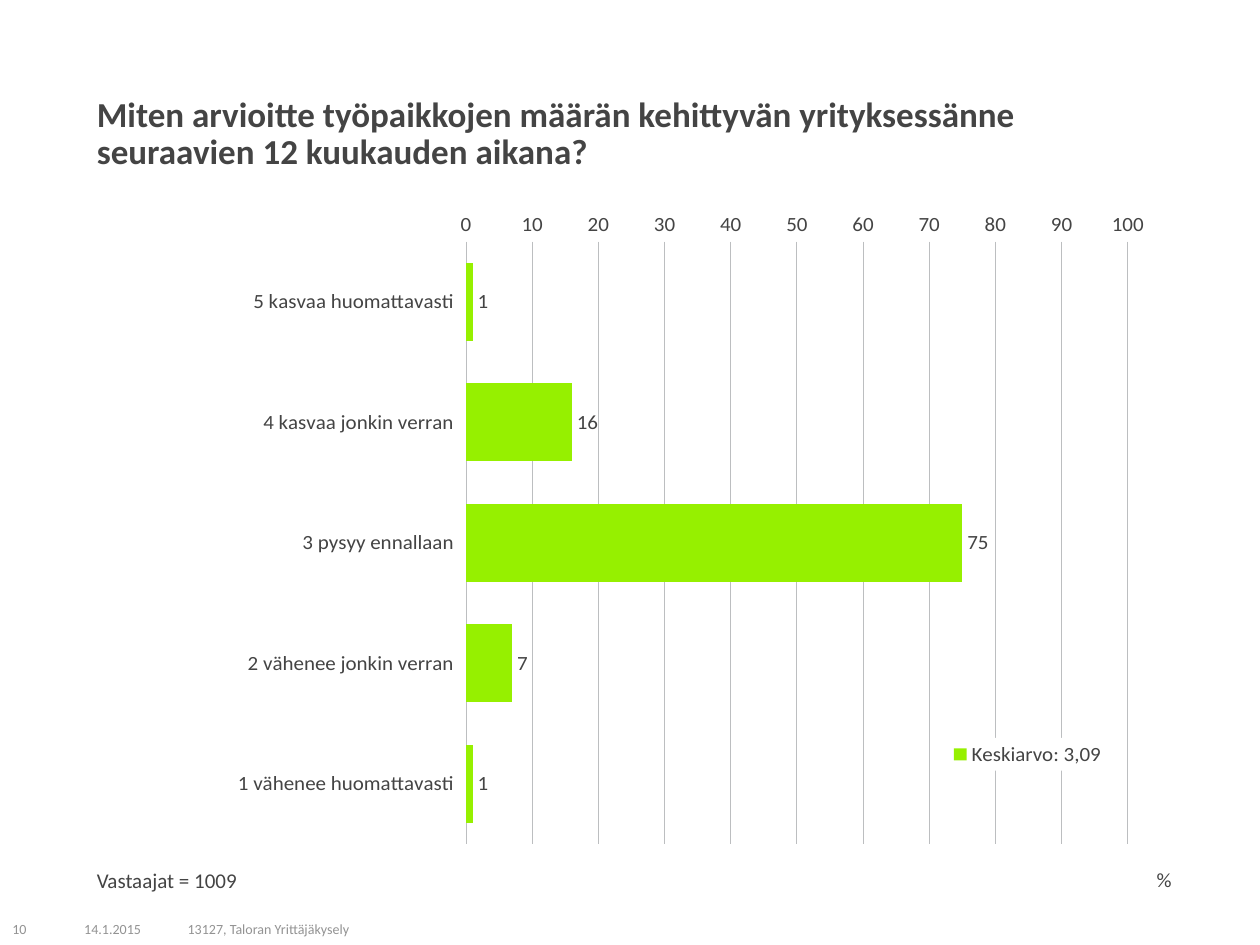
from lxml.etree import SubElement
from pptx import Presentation
from pptx.chart.data import CategoryChartData
from pptx.dml.color import RGBColor
from pptx.enum.chart import (XL_AXIS_CROSSES, XL_CHART_TYPE, XL_LABEL_POSITION,
                             XL_LEGEND_POSITION, XL_TICK_LABEL_POSITION, XL_TICK_MARK)
from pptx.enum.text import MSO_ANCHOR
from pptx.oxml import parse_xml
from pptx.oxml.ns import nsdecls, qn
from pptx.util import Inches, Pt

COLORS = {"text": "444444", "chart": "3F3F3F", "footer": "939393",
          "bar": "96F000", "grid": "BCBEC0", "white": "FFFFFF"}
COLUMNS, ROWS = 100, 75


def rgb(name):
    return RGBColor.from_string(COLORS[name])


class SurveySlide:
    font_name = "Calibri"

    def __init__(self, prs):
        self.s = prs.slides.add_slide(prs.slide_layouts[6])
        self.cell_w = prs.slide_width / COLUMNS
        self.cell_h = prs.slide_height / ROWS

    def box(self, col, row, cols, rows):
        """Turn grid columns and rows into slide lengths."""
        return (round(col * self.cell_w), round(row * self.cell_h),
                round(cols * self.cell_w), round(rows * self.cell_h))

    def style(self, font, size=12, color="text", bold=False):
        for name, value in {"name": self.font_name, "size": Pt(size), "bold": bold}.items():
            setattr(font, name, value)
        font.color.rgb = rgb(color)

    def text(self, text, place, anchor=MSO_ANCHOR.TOP, spacing=0.9, **look):
        tf = self.s.shapes.add_textbox(*self.box(*place)).text_frame
        tf.word_wrap = True
        tf.vertical_anchor = anchor
        p = tf.paragraphs[0]
        p.line_spacing = spacing
        r = p.add_run()
        r.text = text
        self.style(r.font, **look)

    def layout(self, element, index, inner=False, **shares):
        """Place a chart part by shares of the chart's size."""
        for old in element.findall(qn("c:layout")):
            element.remove(old)
        layout = parse_xml(f"<c:layout {nsdecls('c')}><c:manualLayout/></c:layout>")
        values = {"xMode": "edge", "yMode": "edge", **shares}
        if inner:
            values = {"layoutTarget": "inner", **values}
        for tag, value in values.items():
            SubElement(layout[0], qn(f"c:{tag}")).set("val", str(value))
        element.insert(index, layout)

    def bar_chart(self, name, answers, place):
        data = CategoryChartData(number_format="#,##0")
        data.categories = list(answers)
        data.add_series(name, list(answers.values()))
        chart = self.s.shapes.add_chart(
            XL_CHART_TYPE.BAR_CLUSTERED, *self.box(*place), data).chart
        chart.has_title = False
        self.style(chart.font, color="chart")
        self.layout(chart._chartSpace.chart.plotArea, 0, inner=True,
                    x=0.35, y=0.012, w=0.607, h=0.92)
        self.bars(chart.plots[0])
        self.axes(chart.category_axis, chart.value_axis)
        self.legend(chart)

    def bars(self, plot):
        plot.gap_width = 55
        plot.vary_by_categories = False
        fill = plot.series[0].format.fill
        fill.solid()
        fill.fore_color.rgb = rgb("bar")
        labels = plot.series[0].data_labels
        for name, value in {"show_value": True, "position": XL_LABEL_POSITION.OUTSIDE_END,
                            "number_format": "#,##0",
                            "number_format_is_linked": False}.items():
            setattr(labels, name, value)
        self.style(labels.font)

    def axes(self, categories, values):
        for axis in (categories, values):
            axis.major_tick_mark = axis.minor_tick_mark = XL_TICK_MARK.NONE
            axis.format.line.fill.background()
            self.style(axis.tick_labels.font)
        # First answer on top, value scale along the bottom
        categories.reverse_order = True
        categories.crosses = XL_AXIS_CROSSES.MAXIMUM
        categories.tick_label_position = XL_TICK_LABEL_POSITION.LOW
        for name, value in {"minimum_scale": 0, "maximum_scale": 100, "major_unit": 10,
                            "has_major_gridlines": True}.items():
            setattr(values, name, value)
        values.tick_labels.number_format = "General"
        values.tick_labels.number_format_is_linked = False
        line = values.major_gridlines.format.line
        line.width = Pt(0.5)
        line.color.rgb = rgb("grid")
        # Unit at the right end of the scale
        title = values.axis_title
        r = title.text_frame.paragraphs[0].add_run()
        r.text = "%"
        self.style(r.font)
        self.layout(title._element, 1, x=0.98, y=0.96)

    def legend(self, chart):
        chart.has_legend = True
        legend = chart.legend
        legend.position = XL_LEGEND_POSITION.RIGHT
        legend.include_in_layout = True
        self.style(legend.font)
        element = legend._element
        self.layout(element, 1, x=0.79, y=0.77, w=0.15, h=0.05)
        element.find(qn("c:overlay")).addnext(parse_xml(
            f"<c:spPr {nsdecls('c', 'a')}><a:solidFill>"
            f"<a:srgbClr val='{COLORS['white']}'/></a:solidFill></c:spPr>"))


def main():
    prs = Presentation()
    prs.slide_width, prs.slide_height = Inches(10), Inches(7.5)
    slide = SurveySlide(prs)

    # Footer: page number, date, survey
    for text, col, cols in (("10", 0, 4.5), ("14.1.2015", 5.7, 8.2),
                            ("13127, Taloran Yrittäjäkysely", 13.9, 33.1)):
        slide.text(text, (col, 72.5, cols, 2.5), MSO_ANCHOR.MIDDLE, 1.0,
                   size=8, color="footer")

    # Answers
    answers = {"5 kasvaa huomattavasti": 1, "4 kasvaa jonkin verran": 16,
               "3 pysyy ennallaan": 75, "2 vähenee jonkin verran": 7,
               "1 vähenee huomattavasti": 1}
    slide.bar_chart("Keskiarvo: 3,09", answers, (6.7, 16.9, 86.6, 54.4))

    # Question and number of respondents
    slide.text("Miten arvioitte työpaikkojen määrän kehittyvän yrityksessänne "
               "seuraavien 12 kuukauden aikana?", (6.7, 7.2, 86.6, 6.3),
               size=20, bold=True)
    slide.text("Vastaajat = 1009", (6.7, 68.6, 27.7, 2.8))

    prs.save("out.pptx")


if __name__ == "__main__":
    main()
